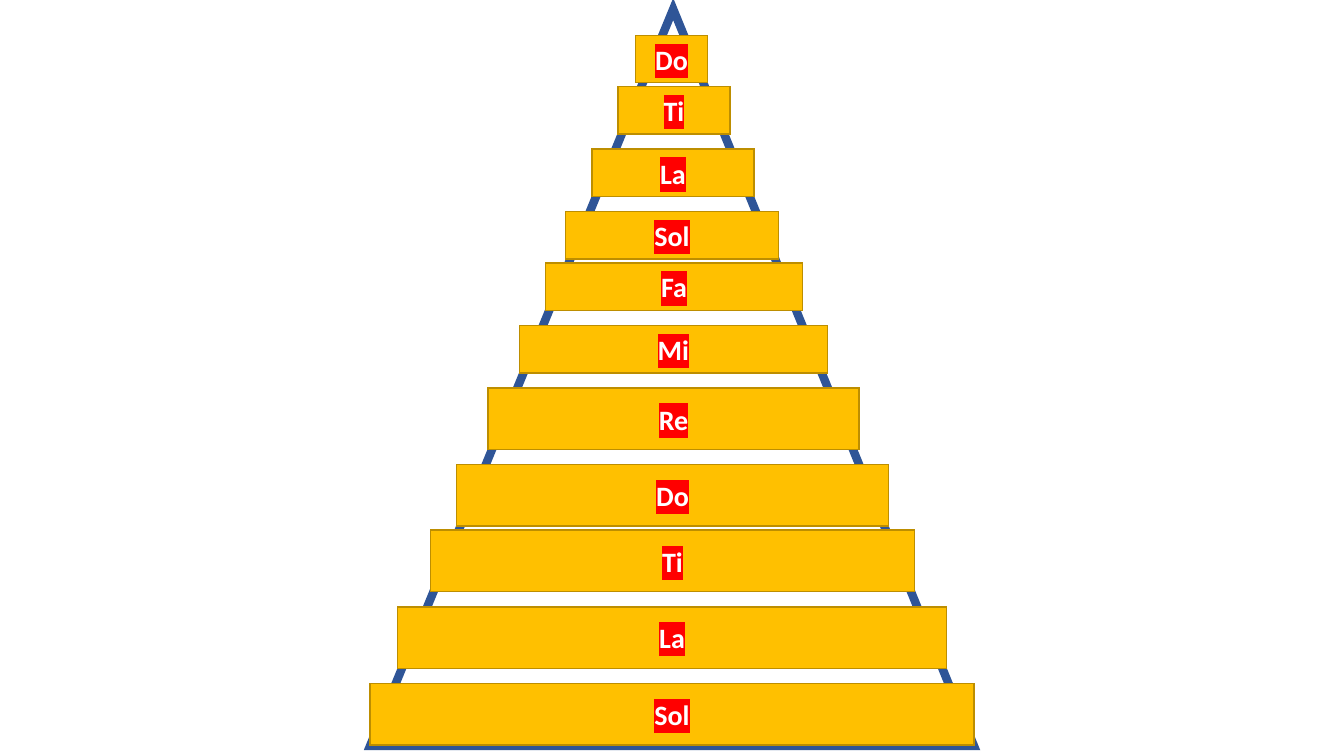
from lxml.etree import SubElement
from pptx import Presentation
from pptx.dml.color import RGBColor
from pptx.enum.shapes import MSO_SHAPE as Shape
from pptx.enum.text import MSO_ANCHOR as Anchor, PP_ALIGN as Align
from pptx.oxml import parse_xml
from pptx.oxml.ns import nsdecls, qn
from pptx.util import Inches, Pt

TALL, LOW = 0.61, 0.47
WIDE, TIGHT = 0.15, 0.04
# note, inset from the pyramid's left, width, height, gap below; bottom first
STEPS = [
    ("Sol", 0, 5.99, TALL, 0.01),
    ("La", 0.27, 5.45, TALL, WIDE),
    ("Ti", 0.6, 4.8, TALL, WIDE),
    ("Do", 0.86, 4.28, TALL, TIGHT),
    ("Re", 1.17, 3.68, TALL, WIDE),
    ("Mi", 1.48, 3.06, LOW, WIDE),
    ("Fa", 1.74, 2.55, LOW, WIDE),
    ("Sol", 1.94, 2.11, LOW, TIGHT),
    ("La", 2.2, 1.61, LOW, WIDE),
    ("Ti", 2.46, 1.11, LOW, WIDE),
    ("Do", 2.63, 0.72, LOW, TIGHT),
]


def color(code):
    return RGBColor.from_string(code)


def draw(slide, kind, box, fill, edge, weight):
    """Add a filled shape whose outline has sharp corners."""
    shape = slide.shapes.add_shape(kind, *map(Inches, box))
    shape.shadow.inherit = False
    shape.fill.solid()
    shape.fill.fore_color.rgb = color(fill)
    shape.line.color.rgb = color(edge)
    shape.line.width = Pt(weight)
    line = shape.line._get_or_add_ln()
    SubElement(line, qn("a:miter"), lim="800000")
    return shape


def write(shape, text, size=20, font="Calibri", ink="FFFFFF", mark="FF0000"):
    frame = shape.text_frame
    frame.vertical_anchor = Anchor.MIDDLE
    para = frame.paragraphs[0]
    para.alignment = Align.CENTER
    run = para.add_run()
    run.text = text
    run.font.size, run.font.bold = Pt(size), True
    run.font.color.rgb = color(ink)
    props = run._r.get_or_add_rPr()
    props.append(parse_xml(
        f'<a:highlight {nsdecls("a")}><a:srgbClr val="{mark}"/></a:highlight>'))
    run.font.name = font


def pyramid(slide, left, top, width, height):
    peak = draw(slide, Shape.ISOSCELES_TRIANGLE, (left, top, width, height),
                "FFFFFF", "2F5597", 6)
    peak.adjustments[0] = 0.502
    y = top + height
    for note, inset, wide, high, gap in STEPS:
        y -= gap + high
        step = draw(slide, Shape.RECTANGLE, (left + inset, y, wide, high),
                    "FFC000", "BD8E00", 1)
        write(step, note)


def main():
    deck = Presentation()
    deck.slide_width, deck.slide_height = Inches(13.33), Inches(7.5)
    slide = deck.slides.add_slide(deck.slide_layouts[6])
    pyramid(slide, 3.67, 0.09, 5.99, 7.31)
    deck.save("out.pptx")


if __name__ == "__main__":
    main()
